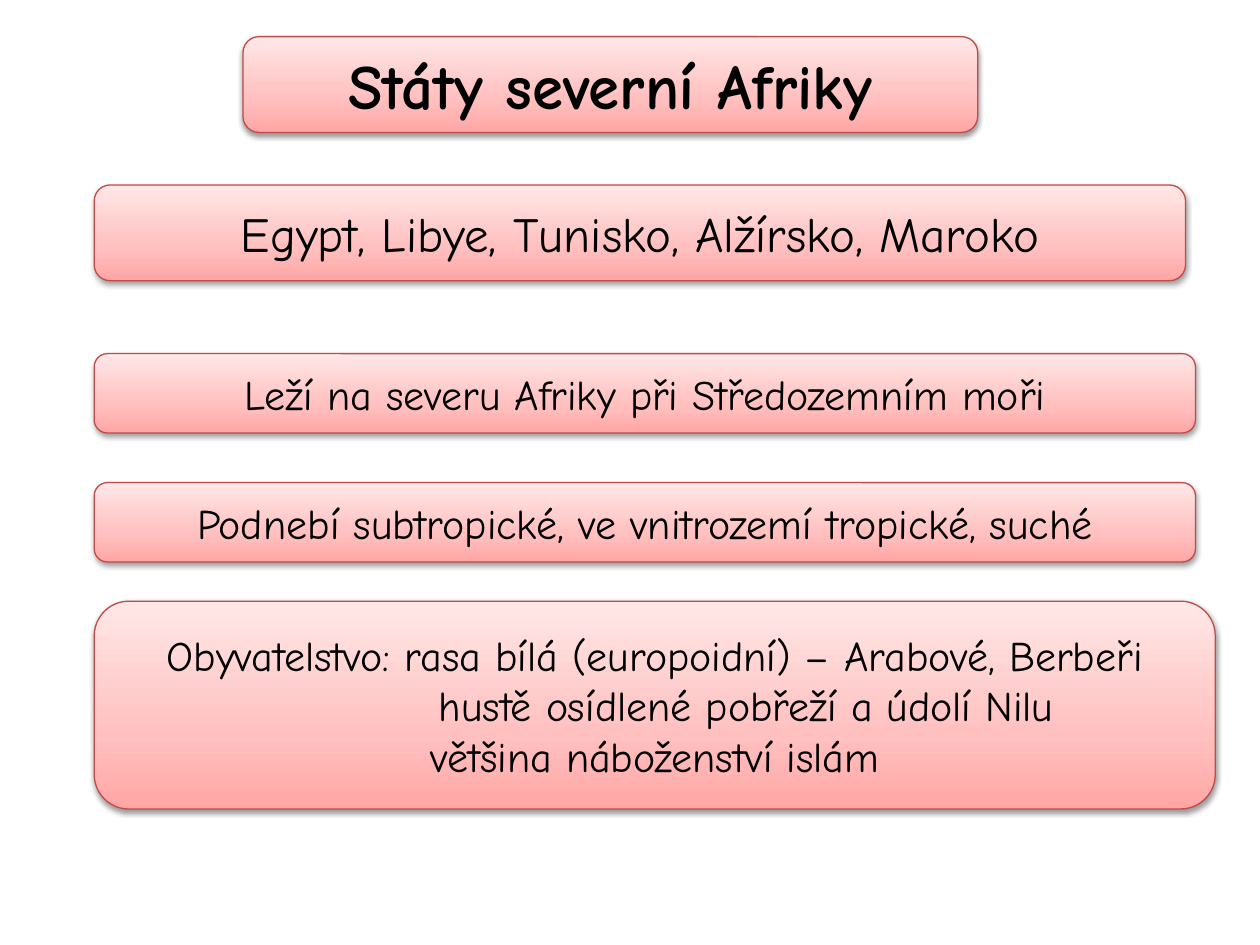
import copy

import pptx
import pptx.dml.color
import pptx.enum.shapes
import pptx.enum.text
import pptx.oxml
import pptx.oxml.ns
import pptx.util

Cm, Pt = pptx.util.Cm, pptx.util.Pt
qn = pptx.oxml.ns.qn

FONT = "Comic Neue"
STOPS = [(0, "FFA6A5"), (0.35, "FFC0BF"), (1, "FFE7E7")]
SHADOW = (
    '<a:outerShdw %s blurRad="40000" dist="20000" dir="5400000" rotWithShape="0">'
    '<a:srgbClr val="000000"><a:alpha val="38000"/></a:srgbClr></a:outerShdw>'
    % pptx.oxml.ns.nsdecls("a")
)


def color(hex):
    return pptx.dml.color.RGBColor.from_string(hex)


def paint(shape):
    """Give a shape the pink gradient, red outline and soft shadow."""
    fill = shape.fill
    fill.gradient()
    fill.gradient_angle = 90
    # The default gradient has two stops: add a third
    props = shape.element.spPr
    stops = props.find(".//" + qn("a:gsLst"))
    stops.append(copy.deepcopy(stops[0]))
    for stop, (place, hex) in zip(fill.gradient_stops, STOPS):
        stop.position = place
        stop.color.rgb = color(hex)

    shape.line.color.rgb = color("BF4C48")
    shape.line.width = Pt(0.75)

    shape.shadow.inherit = False
    props.find(qn("a:effectLst")).append(pptx.oxml.parse_xml(SHADOW))


def panel(slide, box, lines, size, bold=False):
    """Draw a rounded panel; each line is its text and left indent in cm."""
    kind = pptx.enum.shapes.MSO_SHAPE.ROUNDED_RECTANGLE
    shape = slide.shapes.add_shape(kind, *map(Cm, box))
    paint(shape)

    frame = shape.text_frame
    frame.word_wrap = True
    frame.vertical_anchor = pptx.enum.text.MSO_ANCHOR.MIDDLE
    for i, (text, indent) in enumerate(lines):
        para = frame.add_paragraph() if i else frame.paragraphs[0]
        para.text = text
        para.alignment = pptx.enum.text.PP_ALIGN.CENTER
        if indent:
            para._p.get_or_add_pPr().set("marL", str(Cm(indent)))
        para.font.name = FONT
        para.font.size = Pt(size)
        para.font.bold = bold
        para.font.color.rgb = color("000000")


def main():
    deck = pptx.Presentation()
    deck.slide_width, deck.slide_height = Cm(25.4), Cm(19.05)
    slide = deck.slides.add_slide(deck.slide_layouts[6])
    left = 1.9

    # Title
    panel(slide, (4.9, 0.74, 14.81, 1.93), [("Státy severní Afriky", 0)], 36, True)

    # Countries
    panel(slide, (left, 3.73, 22, 1.93),
          [("Egypt, Libye, Tunisko, Alžírsko, Maroko", 0)], 28)

    # Location and climate
    facts = ["Leží na severu Afriky při Středozemním moři",
             "Podnebí subtropické, ve vnitrozemí tropické, suché"]
    for i, fact in enumerate(facts):
        panel(slide, (left, 7.13 + i * 2.6, 22.2, 1.6), [(fact, 0)], 24)

    # Population
    people = [("Obyvatelstvo: rasa bílá (europoidní) – Arabové, Berbeři", 0),
              ("hustě osídlené pobřeží a údolí Nilu", 3.68),
              ("většina náboženství islám", 0)]
    panel(slide, (left, 12.12, 22.6, 4.19), people, 24)

    deck.save("out.pptx")


if __name__ == "__main__":
    main()
